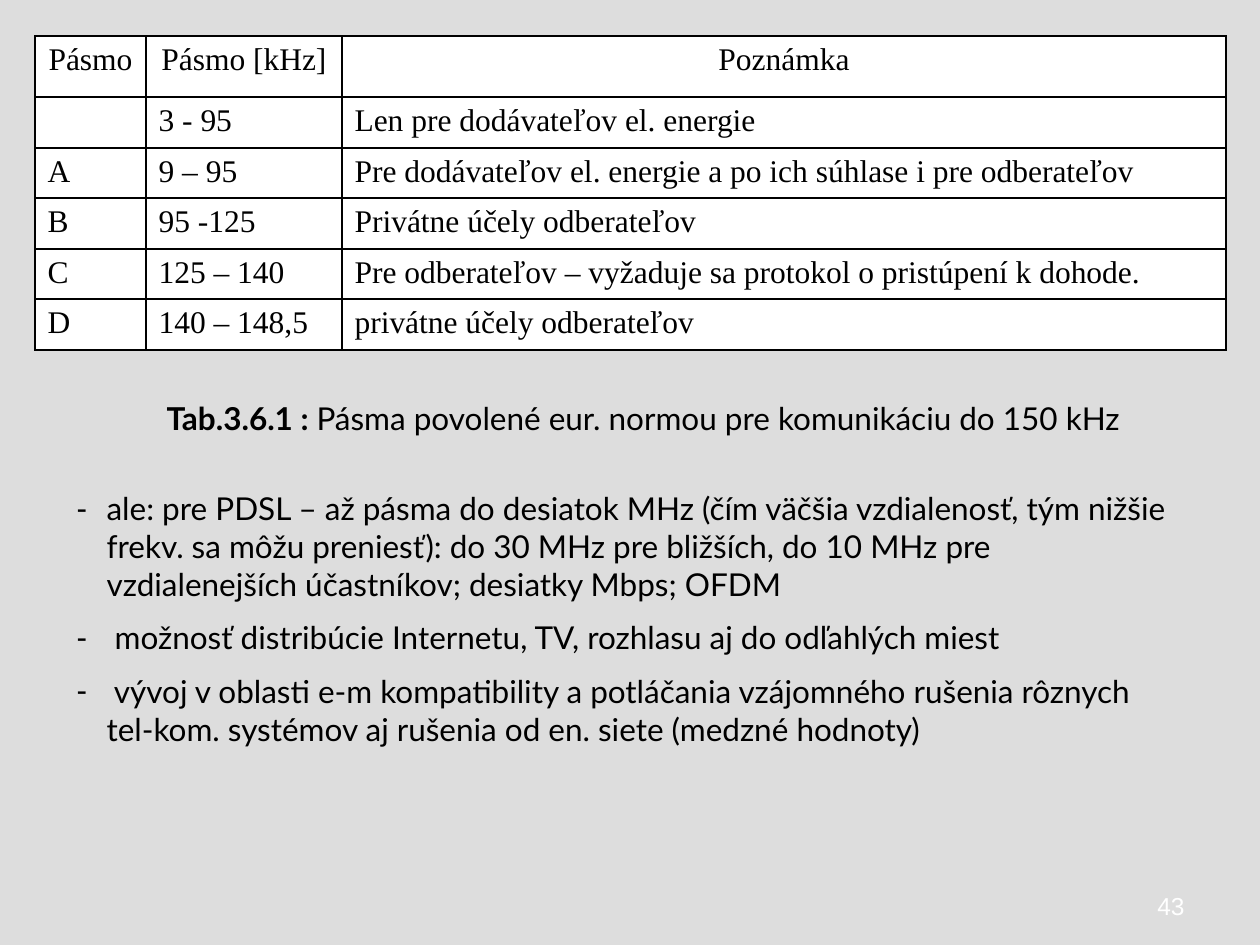
from lxml import etree
from pptx import Presentation
from pptx import util as u
from pptx.dml.color import RGBColor
from pptx.enum import text
from pptx.oxml import ns

PX = 914400 / 126
BLACK, WHITE = "000000", "FFFFFF"


def px(*lengths):
    """Turn pixel lengths into a list of EMU."""
    return [u.Emu(round(length * PX)) for length in lengths]


def style(paragraph, font_name, size=18, color=BLACK):
    paragraph.font.name = font_name
    paragraph.font.size = u.Pt(size)
    paragraph.font.color.rgb = RGBColor.from_string(color)


presentation = Presentation()
presentation.slide_width, presentation.slide_height = px(1260, 945)
slide = presentation.slides.add_slide(presentation.slide_layouts[1])
slide.background.fill.solid()
slide.background.fill.fore_color.rgb = RGBColor.from_string("DDDDDD")

# Caption under the table
caption = slide.shapes.title
caption.left, caption.top, caption.width, caption.height = px(154, 393, 1022, 50)
caption.text_frame.vertical_anchor = text.MSO_ANCHOR.TOP
paragraph = caption.text_frame.paragraphs[0]
paragraph.alignment = text.PP_ALIGN.LEFT
style(paragraph, "Lato")
label = paragraph.add_run()
label.text = "Tab.3.6.1 : "
label.font.bold = True
paragraph.add_run().text = "Pásma povolené eur. normou pre komunikáciu do 150 kHz"

# Dashed list
notes = [
    "ale: pre PDSL – až pásma do desiatok MHz (čím väčšia vzdialenosť, tým nižšie frekv. "
    "sa môžu preniesť): do 30 MHz pre bližších, do 10 MHz pre vzdialenejších účastníkov; "
    "desiatky Mbps; OFDM",
    " možnosť distribúcie Internetu, TV, rozhlasu aj do odľahlých miest",
    " vývoj v oblasti e-m kompatibility a potláčania vzájomného rušenia rôznych "
    "tel-kom. systémov aj rušenia od en. siete (medzné hodnoty)",
]
body = slide.placeholders[1]
body.left, body.top, body.width, body.height = px(64, 483, 1131, 280)
for index, note in enumerate(notes):
    paragraph = body.text_frame.paragraphs[0] if index == 0 else body.text_frame.add_paragraph()
    paragraph.text = note
    paragraph.space_before = u.Pt(9 if index else 0)
    properties = paragraph._p.get_or_add_pPr()
    indent = px(30)[0]
    properties.set("marL", str(indent))
    properties.set("indent", str(-indent))
    etree.SubElement(properties, ns.qn("a:buChar"), char="-")
    style(paragraph, "Lato")

# Frequency bands
bands = [
    ("Pásmo", "Pásmo [kHz]", "Poznámka"),
    ("", "3 - 95", "Len pre dodávateľov el. energie"),
    ("A", "9 – 95", "Pre dodávateľov el. energie a po ich súhlase i pre odberateľov"),
    ("B", "95 -125", "Privátne účely odberateľov"),
    ("C", "125 – 140", "Pre odberateľov – vyžaduje sa protokol o pristúpení k dohode."),
    ("D", "140 – 148,5", "privátne účely odberateľov"),
]
table = slide.shapes.add_table(len(bands), 3, *px(35, 36, 1191, 314)).table
table.first_row = table.horz_banding = False
for column, width in zip(table.columns, px(111, 196, 884)):
    column.width = width
for row, height in zip(table.rows, px(61, 51, 50, 51, 50, 51)):
    row.height = height
for row_index, band in enumerate(bands):
    for column_index, value in enumerate(band):
        cell = table.cell(row_index, column_index)
        cell.text = value
        paragraph = cell.text_frame.paragraphs[0]
        paragraph.alignment = text.PP_ALIGN.LEFT if row_index else text.PP_ALIGN.CENTER
        style(paragraph, "Times New Roman")
        properties = cell._tc.get_or_add_tcPr()
        for side in ("lnL", "lnR", "lnT", "lnB"):
            border = etree.SubElement(properties, ns.qn("a:" + side), w=str(u.Pt(1)))
            border_fill = etree.SubElement(border, ns.qn("a:solidFill"))
            etree.SubElement(border_fill, ns.qn("a:srgbClr"), val=BLACK)
        cell.fill.solid()
        cell.fill.fore_color.rgb = RGBColor.from_string(WHITE)

# Page number
page_number = slide.shapes.add_textbox(*px(1070, 882, 127, 48)).text_frame
page_number.word_wrap = True
page_number.vertical_anchor = text.MSO_ANCHOR.MIDDLE
paragraph = page_number.paragraphs[0]
paragraph.text = "43"
paragraph.alignment = text.PP_ALIGN.RIGHT
style(paragraph, "Arial", 14, WHITE)

presentation.save("out.pptx")
